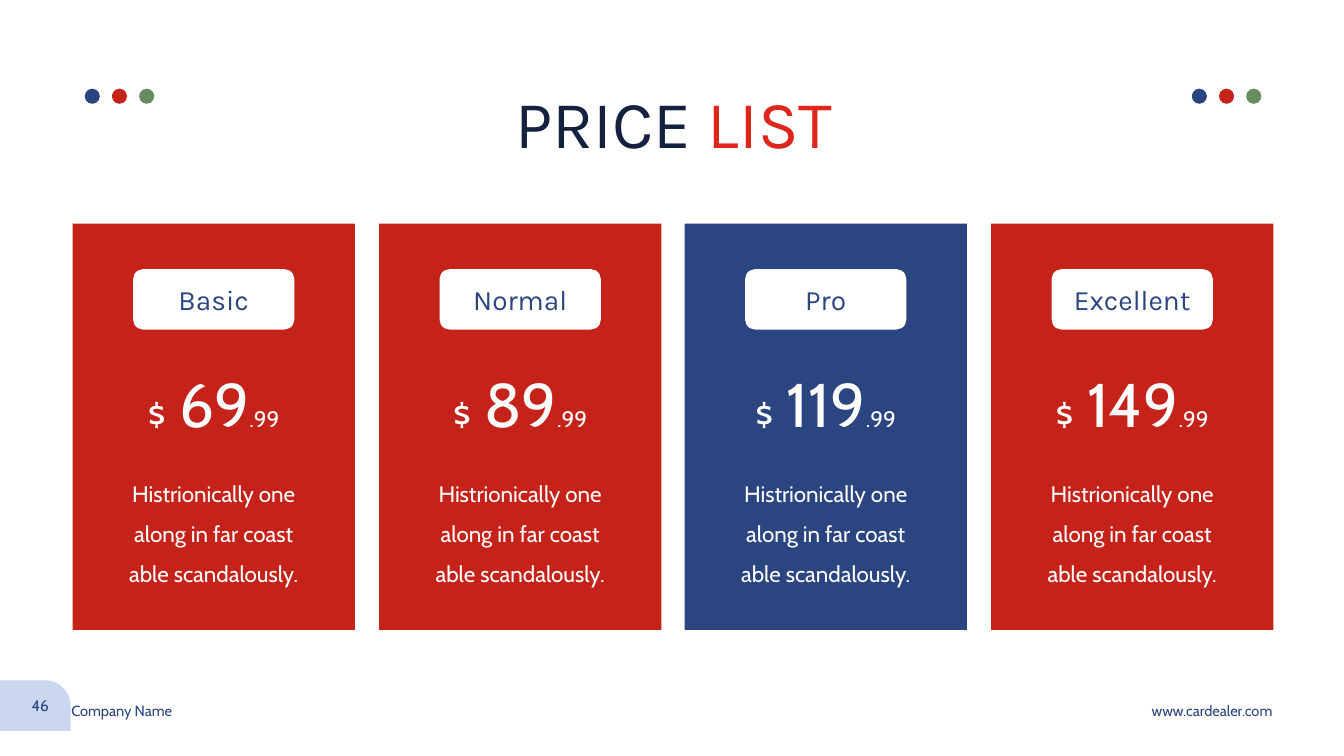
from dataclasses import dataclass

from pptx import Presentation
from pptx import util as u
from pptx.dml.color import RGBColor
from pptx.enum import shapes, text

NAVY = RGBColor(0x2A, 0x45, 0x7F)
RED = RGBColor(0xC5, 0x23, 0x1A)
GREEN = RGBColor(0x66, 0x8C, 0x60)
INK = RGBColor(0x15, 0x22, 0x3F)
BRIGHT_RED = RGBColor(0xDE, 0x26, 0x1C)
PALE_BLUE = RGBColor(0xCA, 0xD5, 0xEE)
WHITE = RGBColor(0xFF, 0xFF, 0xFF)

HEADING_FONT = "Karla"
BODY_FONT = "Cabin"
PX = 9144

CARD_LEFT, CARD_TOP, CARD_WIDTH, CARD_HEIGHT = 72, 222, 280, 403
CARDS_SPAN = 911
DOT_SIZE, DOT_PITCH, DOT_TOP = 15, 27, 88
PITCH_TEXT = "Histrionically one along in far coast able scandalously."


@dataclass(frozen=True)
class Box:
    left: int
    top: int
    width: int
    height: int

    def emu(self) -> tuple[int, int, int, int]:
        return self.left * PX, self.top * PX, self.width * PX, self.height * PX


@dataclass(frozen=True)
class Run:
    words: str
    size: float
    color: RGBColor
    font: str = BODY_FONT


@dataclass(frozen=True)
class Plan:
    name: str
    dollars: str
    fill: RGBColor = RED


PLANS = [
    Plan("Basic", "69"),
    Plan("Normal", "89"),
    Plan("Pro", "119", NAVY),
    Plan("Excellent", "149"),
]


def write(shape, runs: list[Run], align=text.PP_ALIGN.CENTER,
          anchor=text.MSO_ANCHOR.TOP, line_spacing: float = 1.0) -> None:
    frame = shape.text_frame
    frame.word_wrap = True
    frame.auto_size = text.MSO_AUTO_SIZE.NONE
    frame.vertical_anchor = anchor
    paragraph = frame.paragraphs[0]
    paragraph.alignment = align
    paragraph.line_spacing = line_spacing
    for part in runs:
        run = paragraph.add_run()
        run.text = part.words
        run.font.size = u.Pt(part.size)
        run.font.name = part.font
        run.font.color.rgb = part.color


def add_panel(parent, preset: shapes.MSO_SHAPE, box: Box, fill: RGBColor):
    panel = parent.add_shape(preset, *box.emu())
    panel.shadow.inherit = False
    panel.fill.solid()
    panel.fill.fore_color.rgb = fill
    panel.line.fill.background()
    return panel


def add_dots(slide, left: int) -> None:
    trio = slide.shapes.add_group_shape().shapes
    for index, color in enumerate((NAVY, RED, GREEN)):
        box = Box(left + index * DOT_PITCH, DOT_TOP, DOT_SIZE, DOT_SIZE)
        add_panel(trio, shapes.MSO_SHAPE.OVAL, box, color)


def add_footer(slide, box: Box, words: str, align: text.PP_ALIGN) -> None:
    write(slide.shapes.add_textbox(*box.emu()), [Run(words, 10.5, NAVY)], align)


def add_plan(slide, plan: Plan, left: int) -> None:
    card = Box(left, CARD_TOP, CARD_WIDTH, CARD_HEIGHT)
    add_panel(slide.shapes, shapes.MSO_SHAPE.RECTANGLE, card, plan.fill)

    badge = add_panel(slide.shapes, shapes.MSO_SHAPE.ROUNDED_RECTANGLE,
                      Box(left + 60, 267, 160, 60), WHITE)
    write(badge, [Run(plan.name, 20, NAVY, HEADING_FONT)],
          anchor=text.MSO_ANCHOR.MIDDLE)

    price = slide.shapes.add_textbox(*Box(left + 40, 358, 200, 84).emu())
    write(price, [Run("$", 24, WHITE), Run(f" {plan.dollars}", 44, WHITE),
                  Run(".99", 16, WHITE)])

    description = slide.shapes.add_textbox(*Box(left + 40, 458, 200, 127).emu())
    write(description, [Run(PITCH_TEXT, 16, WHITE)], line_spacing=1.5)


def main() -> None:
    deck = Presentation()
    deck.slide_width, deck.slide_height = 1333 * PX, 750 * PX
    slide = deck.slides.add_slide(deck.slide_layouts[5])

    title = slide.shapes.title
    title.left, title.top, title.width, title.height = Box(321, 76, 695, 91).emu()
    write(title, [Run("PRICE ", 48, INK, HEADING_FONT),
                  Run("LIST", 48, BRIGHT_RED, HEADING_FONT)])

    add_footer(slide, Box(61, 691, 127, 29), "Company Name", text.PP_ALIGN.LEFT)
    add_footer(slide, Box(1126, 691, 146, 28), "www.cardealer.com",
               text.PP_ALIGN.RIGHT)

    for dots_left in (84, 1182):
        add_dots(slide, dots_left)

    page_tab = add_panel(slide.shapes, shapes.MSO_SHAPE.ROUND_1_RECTANGLE,
                         Box(-40, 675, 110, 50), PALE_BLUE)
    page_tab.adjustments[0] = 0.5
    page_tab.text_frame.margin_right = 14 * PX
    write(page_tab, [Run("46", 11, NAVY)], text.PP_ALIGN.RIGHT,
          text.MSO_ANCHOR.MIDDLE)

    for index, plan in enumerate(PLANS):
        offset = round(index * CARDS_SPAN / (len(PLANS) - 1))
        add_plan(slide, plan, CARD_LEFT + offset)

    deck.save("out.pptx")


if __name__ == "__main__":
    main()
